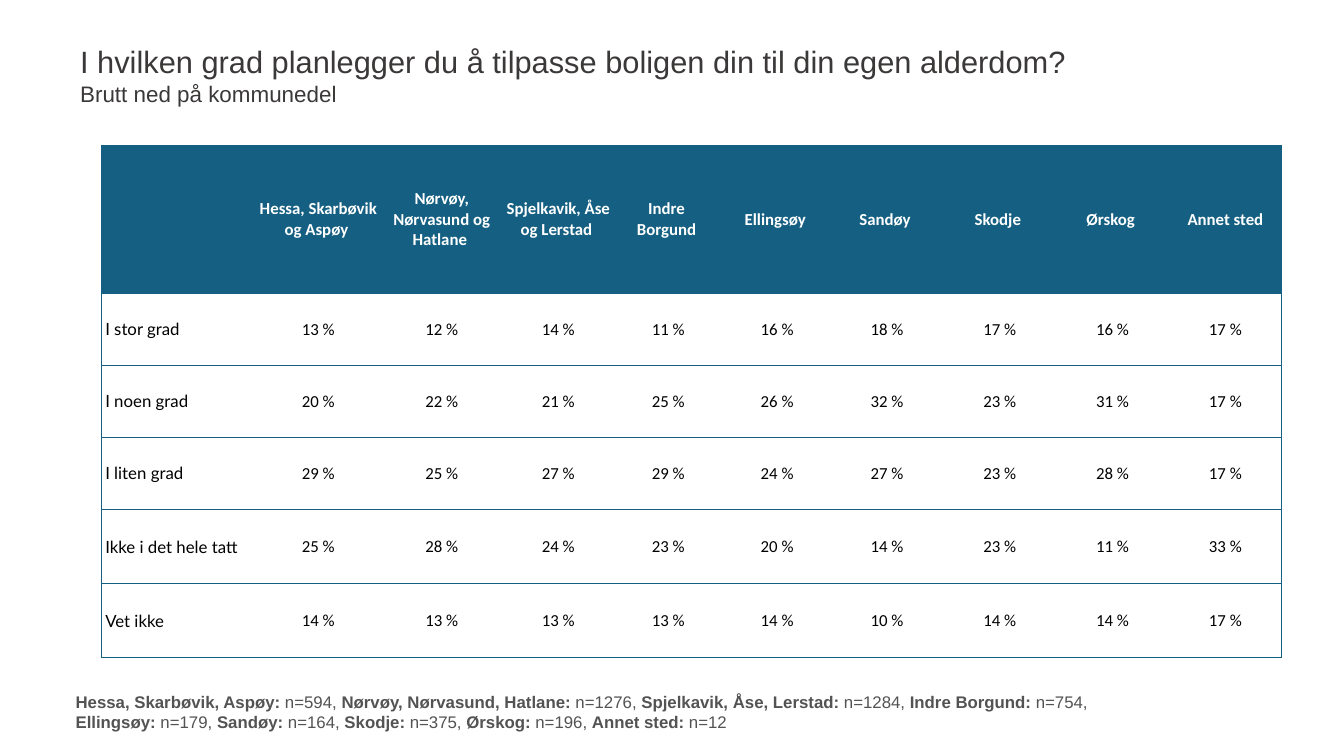
from dataclasses import dataclass

import pptx
import pptx.dml.color
import pptx.enum.text
import pptx.oxml
import pptx.oxml.ns
import pptx.util

RGBColor = pptx.dml.color.RGBColor
TEAL = RGBColor(0x15, 0x60, 0x82)
WHITE = RGBColor(0xFF, 0xFF, 0xFF)
BLACK = RGBColor(0x00, 0x00, 0x00)
TITLE_GREY = RGBColor(0x3B, 0x38, 0x38)
NOTE_GREY = RGBColor(0x53, 0x53, 0x53)

SLIDE_WIDTH = pptx.util.Inches(26.67)
SLIDE_HEIGHT = pptx.util.Inches(15)
CENTER = pptx.enum.text.PP_ALIGN.CENTER
LEFT = pptx.enum.text.PP_ALIGN.LEFT
MIDDLE = pptx.enum.text.MSO_ANCHOR.MIDDLE


@dataclass(frozen=True)
class Area:
    left: float
    top: float
    width: float
    height: float

    def lengths(self) -> tuple[int, int, int, int]:
        return (
            round(SLIDE_WIDTH * self.left / 100),
            round(SLIDE_HEIGHT * self.top / 100),
            round(SLIDE_WIDTH * self.width / 100),
            round(SLIDE_HEIGHT * self.height / 100),
        )


@dataclass(frozen=True)
class TextStyle:
    font: str
    size: float
    color: RGBColor
    bold: bool = False


@dataclass(frozen=True)
class CellStyle:
    text: TextStyle
    fill: RGBColor
    alignment: pptx.enum.text.PP_ALIGN
    side_margin: float


@dataclass(frozen=True)
class Sample:
    district: str
    size: int


TITLE_AREA = Area(5.74, 3.13, 88.71, 13.6)
TABLE_AREA = Area(7.57, 19.27, 87.81, 67.73)
NOTE_AREA = Area(5.4, 91, 88.71, 6.2)

TITLE_STYLE = TextStyle("Arial", 44, TITLE_GREY)
SUBTITLE_STYLE = TextStyle("Arial", 32, TITLE_GREY)
DISTRICT_STYLE = TextStyle("Arial", 24, NOTE_GREY, True)
COUNT_STYLE = TextStyle("Arial", 24, NOTE_GREY)
HEADER_CELL = CellStyle(TextStyle("Calibri", 24, WHITE, True), TEAL, CENTER, 0.01)
LABEL_CELL = CellStyle(TextStyle("Lato", 24, BLACK), WHITE, LEFT, 0.07)
VALUE_CELL = CellStyle(TextStyle("Calibri", 24, BLACK), WHITE, CENTER, 0.01)

COLUMN_WEIGHTS = (3.08, 2.44, 2.46, 2.17, 2.2, 2.12, 2.24, 2.24, 2.24, 2.24)
ROW_WEIGHTS = (2.93, 1.43, 1.43, 1.43, 1.47, 1.47)
HEADERS = (
    "",
    "Hessa, Skarbøvik og Aspøy ",
    "Nørvøy, Nørvasund og Hatlane ",
    "Spjelkavik, Åse og Lerstad ",
    "Indre \nBorgund ",
    "Ellingsøy ",
    "Sandøy ",
    "Skodje ",
    "Ørskog ",
    "Annet sted",
)
ANSWERS = {
    "I stor grad": (13, 12, 14, 11, 16, 18, 17, 16, 17),
    "I noen grad": (20, 22, 21, 25, 26, 32, 23, 31, 17),
    "I liten grad": (29, 25, 27, 29, 24, 27, 23, 28, 17),
    "Ikke i det hele tatt": (25, 28, 24, 23, 20, 14, 23, 11, 33),
    "Vet ikke": (14, 13, 13, 13, 14, 10, 14, 14, 17),
}
SAMPLE_LINES = (
    (
        Sample("Hessa, Skarbøvik, Aspøy:", 594),
        Sample("Nørvøy, Nørvasund, Hatlane:", 1276),
        Sample("Spjelkavik, Åse, Lerstad:", 1284),
        Sample("Indre Borgund:", 754),
    ),
    (
        Sample("Ellingsøy:", 179),
        Sample("Sandøy:", 164),
        Sample("Skodje:", 375),
        Sample("Ørskog:", 196),
        Sample("Annet sted:", 12),
    ),
)


def add_run(paragraph, text: str, style: TextStyle) -> None:
    run = paragraph.add_run()
    run.text = text
    run.font.name = style.font
    run.font.size = pptx.util.Pt(style.size)
    run.font.bold = style.bold
    run.font.color.rgb = style.color


def add_text_frame(slide, area: Area):
    frame = slide.shapes.add_textbox(*area.lengths()).text_frame
    frame.word_wrap = True
    frame.vertical_anchor = MIDDLE
    frame.margin_left = frame.margin_right = pptx.util.Inches(0.06)
    frame.margin_top = frame.margin_bottom = pptx.util.Inches(0.06)
    return frame


def add_title(slide) -> None:
    paragraph = add_text_frame(slide, TITLE_AREA).paragraphs[0]
    question = "I hvilken grad planlegger du å tilpasse boligen din til din egen alderdom? "
    add_run(paragraph, question, TITLE_STYLE)
    paragraph.add_line_break()
    add_run(paragraph, "Brutt ned på kommunedel", SUBTITLE_STYLE)


def add_sample_note(slide) -> None:
    frame = add_text_frame(slide, NOTE_AREA)
    for line_index, samples in enumerate(SAMPLE_LINES):
        paragraph = frame.add_paragraph() if line_index else frame.paragraphs[0]
        for sample in samples:
            add_run(paragraph, sample.district, DISTRICT_STYLE)
            if sample is not samples[-1]:
                ending = ", "
            else:
                ending = "," if samples is not SAMPLE_LINES[-1] else ""
            add_run(paragraph, f" n={sample.size}{ending}", COUNT_STYLE)


def set_borders(cell, visible_sides: str) -> None:
    properties = cell._tc.get_or_add_tcPr()
    for side in "LRTB":
        paint = "<a:noFill/>"
        if side in visible_sides:
            paint = f'<a:solidFill><a:srgbClr val="{TEAL}"/></a:solidFill>'
        properties.append(pptx.oxml.parse_xml(
            f'<a:ln{side} {pptx.oxml.ns.nsdecls("a")} w="12700">{paint}</a:ln{side}>'
        ))


def fill_cell(cell, text: str, style: CellStyle, visible_sides: str) -> None:
    set_borders(cell, visible_sides)
    cell.fill.solid()
    cell.fill.fore_color.rgb = style.fill
    cell.vertical_anchor = MIDDLE
    cell.margin_left = cell.margin_right = pptx.util.Inches(style.side_margin)
    cell.margin_top = cell.margin_bottom = 0
    for line_index, line in enumerate(text.split("\n")):
        frame = cell.text_frame
        paragraph = frame.add_paragraph() if line_index else frame.paragraphs[0]
        paragraph.alignment = style.alignment
        if line:
            add_run(paragraph, line, style.text)


def add_answer_table(slide) -> None:
    left, top, width, height = TABLE_AREA.lengths()
    table = slide.shapes.add_table(
        len(ROW_WEIGHTS), len(COLUMN_WEIGHTS), left, top, width, height
    ).table
    table.horz_banding = False
    for column, weight in zip(table.columns, COLUMN_WEIGHTS):
        column.width = round(width * weight / sum(COLUMN_WEIGHTS))
    for row, weight in zip(table.rows, ROW_WEIGHTS):
        row.height = round(height * weight / sum(ROW_WEIGHTS))
    rows = [HEADERS]
    rows += [(label, *(f"{value} %" for value in values)) for label, values in ANSWERS.items()]
    sides = {0: "LTB", len(COLUMN_WEIGHTS) - 1: "RTB"}
    for row_index, texts in enumerate(rows):
        for column_index, text in enumerate(texts):
            body_style = VALUE_CELL if column_index else LABEL_CELL
            style = body_style if row_index else HEADER_CELL
            cell = table.cell(row_index, column_index)
            fill_cell(cell, text, style, sides.get(column_index, "TB"))


def main() -> None:
    presentation = pptx.Presentation()
    presentation.slide_width = SLIDE_WIDTH
    presentation.slide_height = SLIDE_HEIGHT
    slide = presentation.slides.add_slide(presentation.slide_layouts[6])
    add_title(slide)
    add_answer_table(slide)
    add_sample_note(slide)
    presentation.save("out.pptx")


if __name__ == "__main__":
    main()
